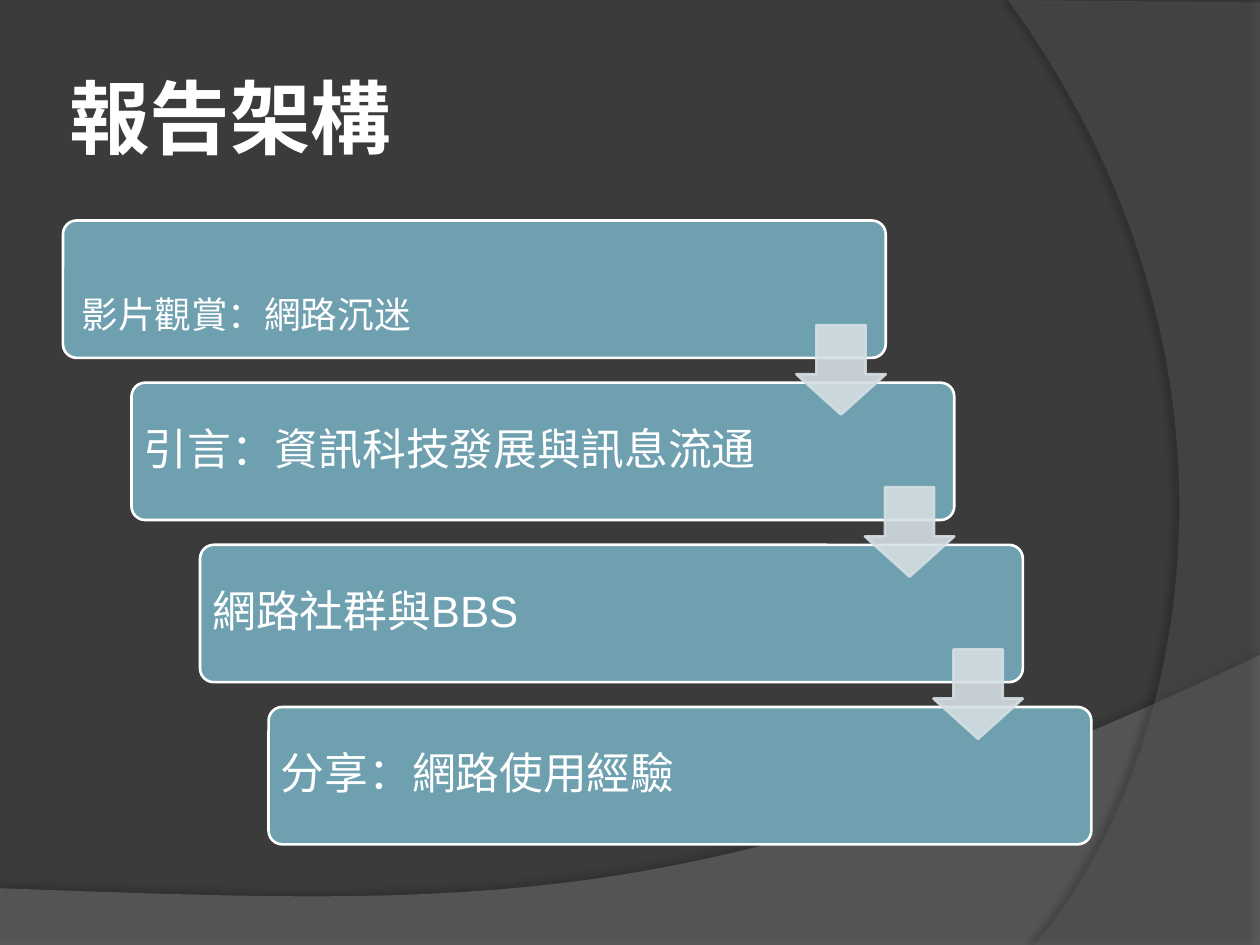
from lxml import etree
from pptx import Presentation
from pptx import util as u
from pptx.dml.color import RGBColor
from pptx.enum import shapes, text
from pptx.oxml import ns

COLORS = {
    "background": "3B3B3B",
    "lower_wave": "7F7F7F",
    "side_wave": "5E5E5E",
    "step": "6EA0B0",
    "arrow": "D5DFE4",
    "white": "FFFFFF",
    "shadow": "000000",
}
STEPS = [
    ("影片觀賞：網路沉迷", {"size": 36, "inset": 0.15, "baseline": -25}),
    ("引言：資訊科技發展與訊息流通", {}),
    ("網路社群與BBS", {}),
    ("分享：網路使用經驗", {}),
]
LEFT, TOP, WIDTH, HEIGHT = 0.5, 1.75, 6.53, 1.09
STEP_X, STEP_Y = 0.544, 1.287
TEXT_WIDTH = 5.3
ARROW = 0.71


def color(name):
    return RGBColor.from_string(COLORS[name])


def curve(start, first, second, end, count=60):
    points = []
    for index in range(count + 1):
        t = index / count
        weights = ((1 - t) ** 3, 3 * t * (1 - t) ** 2, 3 * t**2 * (1 - t), t**3)
        points.append(tuple(
            sum(weight * value for weight, value in zip(weights, values))
            for values in zip(start, first, second, end)
        ))
    return points


class SlideBuilder:
    font = "Arial"
    east_asian_font = "Noto Sans CJK SC"

    def __init__(self, presentation):
        self.slide = presentation.slides.add_slide(presentation.slide_layouts[6])
        fill = self.slide.background.fill
        fill.solid()
        fill.fore_color.rgb = color("background")

    def paint(self, shape, fill, line=None, opacity=100):
        shape.shadow.inherit = False
        shape.fill.solid()
        shape.fill.fore_color.rgb = color(fill)
        if line:
            shape.line.color.rgb = color(line)
            shape.line.width = u.Pt(1.5)
        else:
            shape.line.fill.background()
        if opacity < 100:
            for element in shape._element.spPr.iter(ns.qn("a:srgbClr")):
                etree.SubElement(element, ns.qn("a:alpha"), val=str(opacity * 1000))

    def wave(self, points, fill, opacity, shadow):
        start, *rest = [(u.Inches(x), u.Inches(y)) for x, y in points]
        builder = self.slide.shapes.build_freeform(*start)
        builder.add_line_segments(rest, close=True)
        shape = builder.convert_to_shape()
        self.paint(shape, fill, opacity=opacity)
        strength, blur, distance, angle = shadow
        effects = shape._element.spPr.find(ns.qn("a:effectLst"))
        outer = etree.SubElement(
            effects, ns.qn("a:outerShdw"),
            blurRad=str(u.Pt(blur)), dist=str(u.Pt(distance)),
            dir=str(angle * 60000), algn="ctr", rotWithShape="0",
        )
        shade = etree.SubElement(outer, ns.qn("a:srgbClr"), val=COLORS["shadow"])
        etree.SubElement(shade, ns.qn("a:alpha"), val=str(strength * 1000))

    def block(self, kind, box, adjustments, fill, line, opacity=100):
        shape = self.slide.shapes.add_shape(kind, *map(u.Inches, box))
        for index, value in enumerate(adjustments):
            shape.adjustments[index] = value
        self.paint(shape, fill, line, opacity)

    def label(self, content, box, size=25, inset=0.1, bold=False,
              font=None, spacing=1.0, baseline=0):
        frame = self.slide.shapes.add_textbox(*map(u.Inches, box)).text_frame
        margin = u.Inches(inset)
        frame_format = {
            "word_wrap": True,
            "vertical_anchor": text.MSO_ANCHOR.MIDDLE,
            "margin_left": margin,
            "margin_top": margin,
            "margin_right": margin,
            "margin_bottom": margin,
        }
        for name, value in frame_format.items():
            setattr(frame, name, value)
        paragraph = frame.paragraphs[0]
        paragraph.line_spacing = spacing
        run = paragraph.add_run()
        run.text = content
        font_format = {"name": font or self.font, "size": u.Pt(size), "bold": bold}
        for name, value in font_format.items():
            setattr(run.font, name, value)
        run.font.color.rgb = color("white")
        properties = run._r.get_or_add_rPr()
        etree.SubElement(properties, ns.qn("a:ea"), typeface=self.east_asian_font)
        if baseline:
            properties.set("baseline", str(baseline * 1000))


def main():
    presentation = Presentation()
    presentation.slide_width = u.Inches(10)
    presentation.slide_height = u.Inches(7.5)
    builder = SlideBuilder(presentation)

    lower_edge = curve((10, 5.2), (5.59, 7.29), (3.91, 7.19), (0, 7.05))
    builder.wave([(0, 7.5), (10, 7.5), *lower_edge], "lower_wave", 45, (35, 4, 3.5, 270))
    side_edge = curve((8.21, 7.5), (9.35, 6.19), (10.18, 3), (8, 0))
    builder.wave([(10, 0.02), (10, 7.5), *side_edge], "side_wave", 40, (45, 4, 4, 180))

    builder.label("報告架構", (0.5, 0.3, 8.17, 1.25), size=46, inset=0.05,
                  bold=True, font=builder.east_asian_font)

    for index, (content, style) in enumerate(STEPS):
        left, top = LEFT + index * STEP_X, TOP + index * STEP_Y
        builder.block(shapes.MSO_SHAPE.ROUNDED_RECTANGLE, (left, top, WIDTH, HEIGHT),
                      [0.1], "step", "white")
        builder.label(content, (left, top, TEXT_WIDTH, HEIGHT), spacing=0.9, **style)

    for index in range(len(STEPS) - 1):
        left = LEFT + WIDTH - ARROW + index * STEP_X
        top = 2.58 + index * STEP_Y
        builder.block(shapes.MSO_SHAPE.DOWN_ARROW, (left, top, ARROW, ARROW),
                      [0.55, 0.45], "arrow", "arrow", 90)

    presentation.save("out.pptx")


if __name__ == "__main__":
    main()
